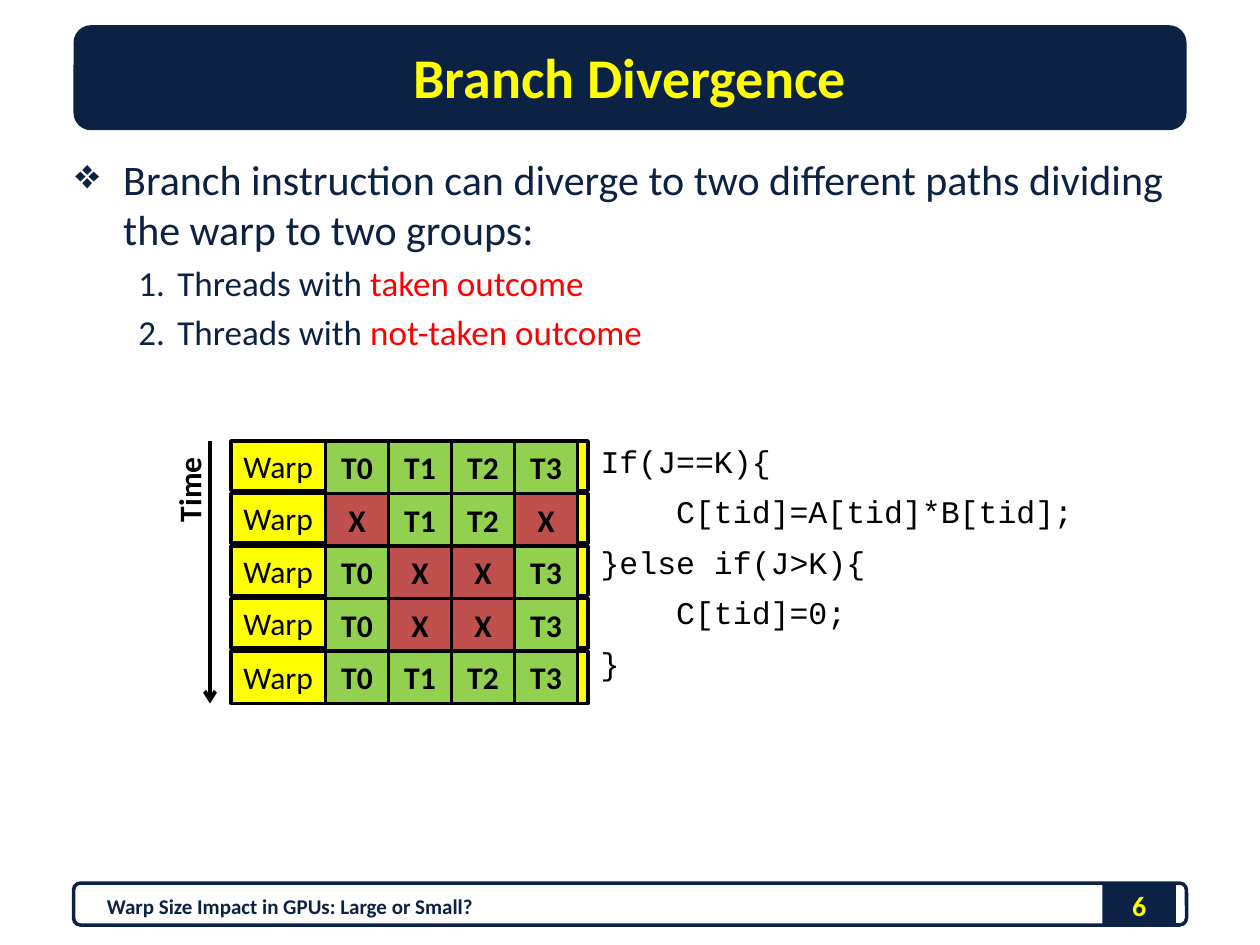
import pptx
import pptx.util
import pptx.dml.color
import pptx.enum.shapes
import pptx.enum.text
import pptx.oxml.ns
import lxml.etree

COLOURS = {"navy": "0B2245", "yellow": "FFFF00", "green": "92D050",
           "brick": "C0504D", "red": "FF0000", "black": "000000"}
SHAPES = pptx.enum.shapes.MSO_SHAPE
ANCHORS = pptx.enum.text.MSO_ANCHOR
ALIGNS = pptx.enum.text.PP_ALIGN


def units(count):
    """Grid of 120 columns and 90 rows, twelve to the inch."""
    return pptx.util.Inches(count / 12)


def colour(name):
    return pptx.dml.color.RGBColor.from_string(COLOURS[name])


def add_element(parent, tag, **attributes):
    return lxml.etree.SubElement(parent, pptx.oxml.ns.qn(tag), attributes)


class SlideBuilder:
    font = "Calibri"
    code_font = "Courier New"
    size = 18

    def __init__(self, page):
        self.page = page

    def add_span(self, para, text, size=None, tint="black", bold=False, font=None):
        span = para.add_run()
        span.text = text
        span.font.name = font or self.font
        span.font.size = pptx.util.Pt(size or self.size)
        span.font.bold = bold
        span.font.color.rgb = colour(tint)

    def shape(self, kind, column, row, width, height, fill=None, line=None):
        box = self.page.shapes.add_shape(kind, *map(units, (column, row, width, height)))
        box.shadow.inherit = False
        if fill:
            box.fill.solid()
            box.fill.fore_color.rgb = colour(fill)
        else:
            box.fill.background()
        if line:
            box.line.color.rgb = colour(line)
            box.line.width = pptx.util.Pt(2)
        else:
            box.line.fill.background()
        return box

    def block(self, column, row, width, height, fill, text, align, bold=False):
        box = self.shape(SHAPES.RECTANGLE, column, row, width, height, fill, "black")
        frame = box.text_frame
        frame.vertical_anchor = ANCHORS.MIDDLE
        frame.paragraphs[0].alignment = align
        self.add_span(frame.paragraphs[0], text, bold=bold)

    def text_box(self, column, row, width, height, wrap=True):
        box = self.page.shapes.add_textbox(*map(units, (column, row, width, height)))
        box.text_frame.word_wrap = wrap
        return box

    def label(self, column, row, width, height, text, size, tint, align):
        frame = self.text_box(column, row, width, height).text_frame
        frame.vertical_anchor = ANCHORS.MIDDLE
        frame.paragraphs[0].alignment = align
        self.add_span(frame.paragraphs[0], text, size, tint, bold=True)

    def side_label(self, column, row, width, height, text):
        box = self.text_box(column, row, width, height, wrap=False)
        box.rotation = 270
        self.add_span(box.text_frame.paragraphs[0], text, bold=True)

    def outline(self, column, row, width, height, items):
        """Items are (level, [(text, tint), ...])."""
        frame = self.text_box(column, row, width, height).text_frame
        for index, (level, spans) in enumerate(items):
            para = frame.add_paragraph() if index else frame.paragraphs[0]
            para.level = level
            size, margin, indent = ((24, 0.38, -0.38), (20, 0.81, -0.31))[level]
            properties = para._p.get_or_add_pPr()
            properties.set("marL", str(pptx.util.Inches(margin)))
            properties.set("indent", str(pptx.util.Inches(indent)))
            if index:
                para.space_before = pptx.util.Pt(size * 0.2)
            if level:
                add_element(properties, "a:buAutoNum", type="arabicPeriod")
            else:
                add_element(properties, "a:buChar", char="❖")
            for text, tint in spans:
                self.add_span(para, text, size, tint)

    def code_table(self, column, row, width, height, lines):
        frame = self.page.shapes.add_table(
            len(lines), 1, *map(units, (column, row, width, height)))
        table = frame.table
        table.first_row = table.horz_banding = False
        for index, line in enumerate(lines):
            table.rows[index].height = units(3)
            cell = table.cell(index, 0)
            cell.fill.background()
            self.add_span(cell.text_frame.paragraphs[0], line, font=self.code_font)
        frame.height = units(height)

    def arrow(self, column, row, end_column, end_row):
        line = self.page.shapes.add_connector(
            pptx.enum.shapes.MSO_CONNECTOR.STRAIGHT,
            *map(units, (column, row, end_column, end_row)))
        line.line.color.rgb = colour("black")
        line.line.width = pptx.util.Pt(2.25)
        add_element(line.line._get_or_add_ln(), "a:tailEnd", type="arrow")
        add_element(line._element.spPr, "a:effectLst")


def main():
    deck = pptx.Presentation()
    deck.slide_width, deck.slide_height = units(120), units(90)
    slide = SlideBuilder(deck.slides.add_slide(deck.slide_layouts[6]))

    # Footer and title bars
    slide.shape(SHAPES.RECTANGLE, 105, 84, 7, 4, fill="navy")
    slide.shape(SHAPES.ROUNDED_RECTANGLE, 7, 84.1, 106, 4, line="navy")
    slide.shape(SHAPES.ROUNDED_RECTANGLE, 7, 2.4, 106, 10, fill="navy")
    slide.label(6, 2, 108, 10.5, "Branch Divergence", 32, "yellow", ALIGNS.CENTER)
    slide.label(104, 83.8, 9, 4.8, "6", 16, "yellow", ALIGNS.CENTER)
    slide.label(9, 83.9, 67, 4.8, "Warp Size Impact in GPUs: Large or Small?",
                12, "navy", ALIGNS.LEFT)

    # Explanation
    slide.outline(6, 14, 108, 66.4, [
        (0, [("Branch instruction can diverge to two different paths dividing "
              "the warp to two groups:", "navy")]),
        (1, [("Threads with ", "navy"), ("taken outcome", "red")]),
        (1, [("Threads with ", "navy"), ("not-taken outcome", "red")]),
    ])

    # Code, one line per table row
    top = 42
    slide.code_table(56, top, 49, 24, [
        "If(J==K){",
        "    C[tid]=A[tid]*B[tid];",
        "}else if(J>K){",
        "    C[tid]=0;",
        "}",
    ])

    # Active threads of the warp at each code line
    active_threads = [(0, 1, 2, 3), (1, 2), (0, 3), (0, 3), (0, 1, 2, 3)]
    step = 5
    last = len(active_threads) - 1
    for index in range(len(active_threads)):
        height = step if index == last else 4.7
        slide.block(22, top + index * step, 34, height, "yellow", "Warp", ALIGNS.LEFT)
    for index, active in enumerate(active_threads):
        for thread in range(4):
            fill, text = ("green", f"T{thread}") if thread in active else ("brick", "X")
            slide.block(31 + thread * 6, top + index * step, 6, step, fill, text,
                        ALIGNS.CENTER, bold=True)

    # Time axis
    slide.side_label(13.7, 44.2, 8.6, 4.8, "Time")
    slide.arrow(20, top, 20, top + len(active_threads) * step)

    deck.save("out.pptx")


if __name__ == "__main__":
    main()
